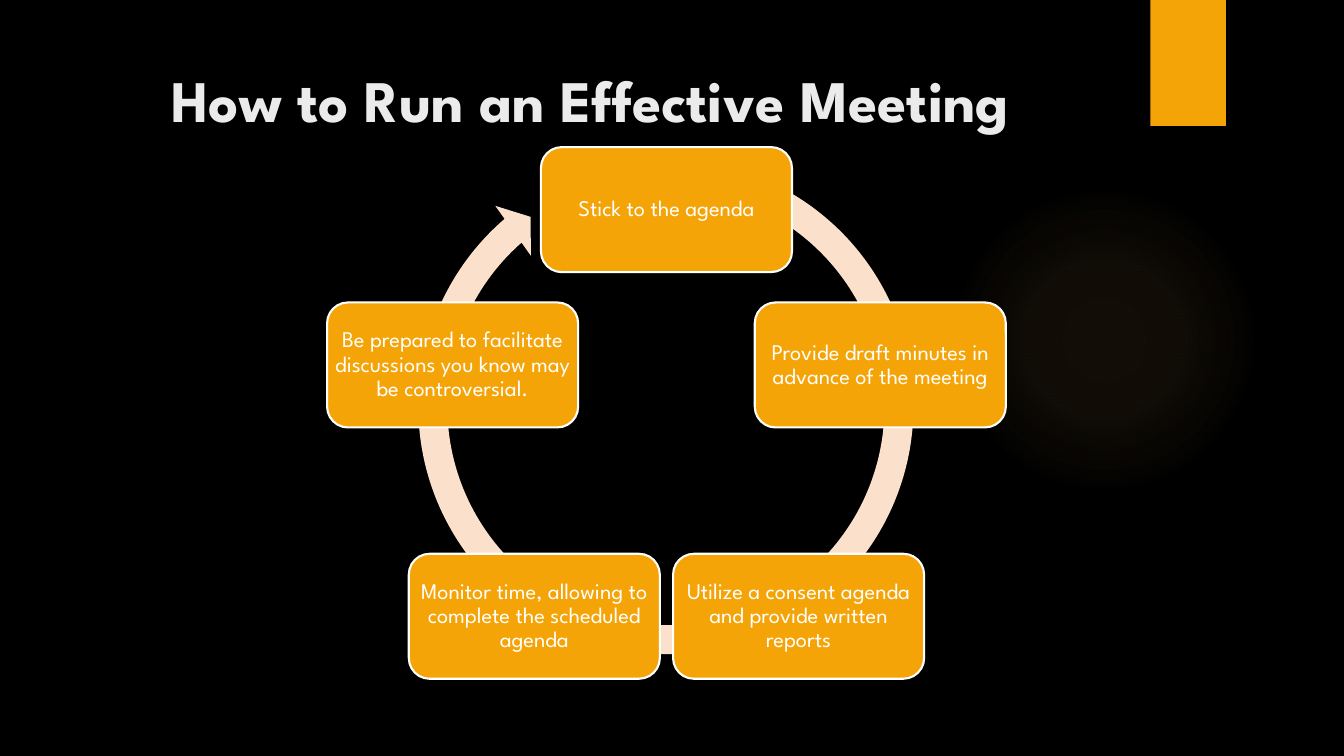
import math

import pptx
import pptx.dml.color
import pptx.enum.shapes
import pptx.enum.text
import pptx.oxml
import pptx.oxml.ns
import pptx.util

Inches = pptx.util.Inches
Shapes = pptx.enum.shapes.MSO_SHAPE

COLORS = {
    "background": "000000",
    "amber": "F5A408",
    "glow": "FAC96A",
    "ring": "FBE0CC",
    "title": "EBEBEB",
    "white": "FFFFFF",
}
FONT = "League Spartan"
STEPS = [
    "Stick to the agenda",
    "Provide draft minutes in advance of the meeting",
    "Utilize a consent agenda and provide written reports",
    "Monitor time, allowing to complete the scheduled agenda",
    "Be prepared to facilitate discussions you know may be controversial.",
]
CENTER_X, CENTER_Y, RADIUS = 6.61, 4.31, 2.23
STEP_WIDTH, STEP_HEIGHT = 2.49, 1.24


def color(name):
    return pptx.dml.color.RGBColor.from_string(COLORS[name])


class MeetingSlide:
    def __init__(self, presentation):
        self.slide = presentation.slides.add_slide(presentation.slide_layouts[5])
        fill = self.slide.background.fill
        fill.solid()
        fill.fore_color.rgb = color("background")

    def set_text(self, shape, text, size, color_name, margin, bold=False):
        frame = shape.text_frame
        frame.text = text
        frame.word_wrap = True
        frame.auto_size = pptx.enum.text.MSO_AUTO_SIZE.NONE
        frame.vertical_anchor = pptx.enum.text.MSO_ANCHOR.MIDDLE
        frame.margin_left = frame.margin_right = Inches(margin)
        frame.margin_top = frame.margin_bottom = Inches(margin)
        paragraph = frame.paragraphs[0]
        paragraph.alignment = pptx.enum.text.PP_ALIGN.CENTER
        paragraph.font.name = FONT
        paragraph.font.size = pptx.util.Pt(size)
        paragraph.font.bold = bold
        paragraph.font.color.rgb = color(color_name)
        return paragraph

    def title(self, text, left, top, width, height):
        title = self.slide.shapes.title
        title.left, title.top = Inches(left), Inches(top)
        title.width, title.height = Inches(width), Inches(height)
        self.set_text(title, text, 42, "title", 0.05, bold=True)

    def shape(self, kind, left, top, width, height, fill):
        shape = self.slide.shapes.add_shape(
            kind, Inches(left), Inches(top), Inches(width), Inches(height))
        shape.shadow.inherit = False
        shape.fill.solid()
        shape.fill.fore_color.rgb = color(fill)
        shape.line.fill.background()
        return shape

    def glow(self, left, top, size, stops):
        shape = self.shape(Shapes.OVAL, left, top, size, size, "glow")
        stop_xml = "".join(
            f'<a:gs pos="{position * 1000}"><a:srgbClr val="{COLORS["glow"]}">'
            f'<a:alpha val="{alpha * 1000}"/></a:srgbClr></a:gs>'
            for position, alpha in stops)
        gradient = pptx.oxml.parse_xml(
            f'<a:gradFill {pptx.oxml.ns.nsdecls("a")}><a:gsLst>{stop_xml}</a:gsLst>'
            '<a:path path="circle"><a:fillToRect l="50000" t="50000" r="50000" b="50000"/>'
            '</a:path></a:gradFill>')
        properties = shape.element.spPr
        properties.replace(properties.find(pptx.oxml.ns.qn("a:solidFill")), gradient)

    def ring(self, left, top, size, adjustments):
        arrow = self.shape(Shapes.CIRCULAR_ARROW, left, top, size, size, "ring")
        for index, value in enumerate(adjustments):
            arrow.adjustments[index] = value

    def step(self, text, center_x, center_y):
        box = self.shape(
            Shapes.ROUNDED_RECTANGLE, center_x - STEP_WIDTH / 2,
            center_y - STEP_HEIGHT / 2, STEP_WIDTH, STEP_HEIGHT, "amber")
        box.line.color.rgb = color("white")
        box.line.width = pptx.util.Pt(1.5)
        paragraph = self.set_text(box, text, 16, "white", 0)
        paragraph.line_spacing = 0.9


def main():
    presentation = pptx.Presentation()
    presentation.slide_width = Inches(13.33)
    presentation.slide_height = Inches(7.5)
    meeting = MeetingSlide(presentation)
    meeting.glow(9.41, 1.83, 3.08, [(0, 7), (36, 6), (69, 0)])
    meeting.shape(Shapes.RECTANGLE, 11.41, 0, 0.75, 1.25, "amber")
    meeting.title("How to Run an Effective Meeting", 0.71, 0.5, 10.29, 0.96)
    meeting.ring(3.99, 1.42, 5.23, [0.055, 3.307, 137.416, 174.069, 0.058])
    for index, text in enumerate(STEPS):
        angle = math.tau * index / len(STEPS)
        meeting.step(text, CENTER_X + RADIUS * math.sin(angle),
                     CENTER_Y - RADIUS * math.cos(angle))
    presentation.save("out.pptx")


if __name__ == "__main__":
    main()
